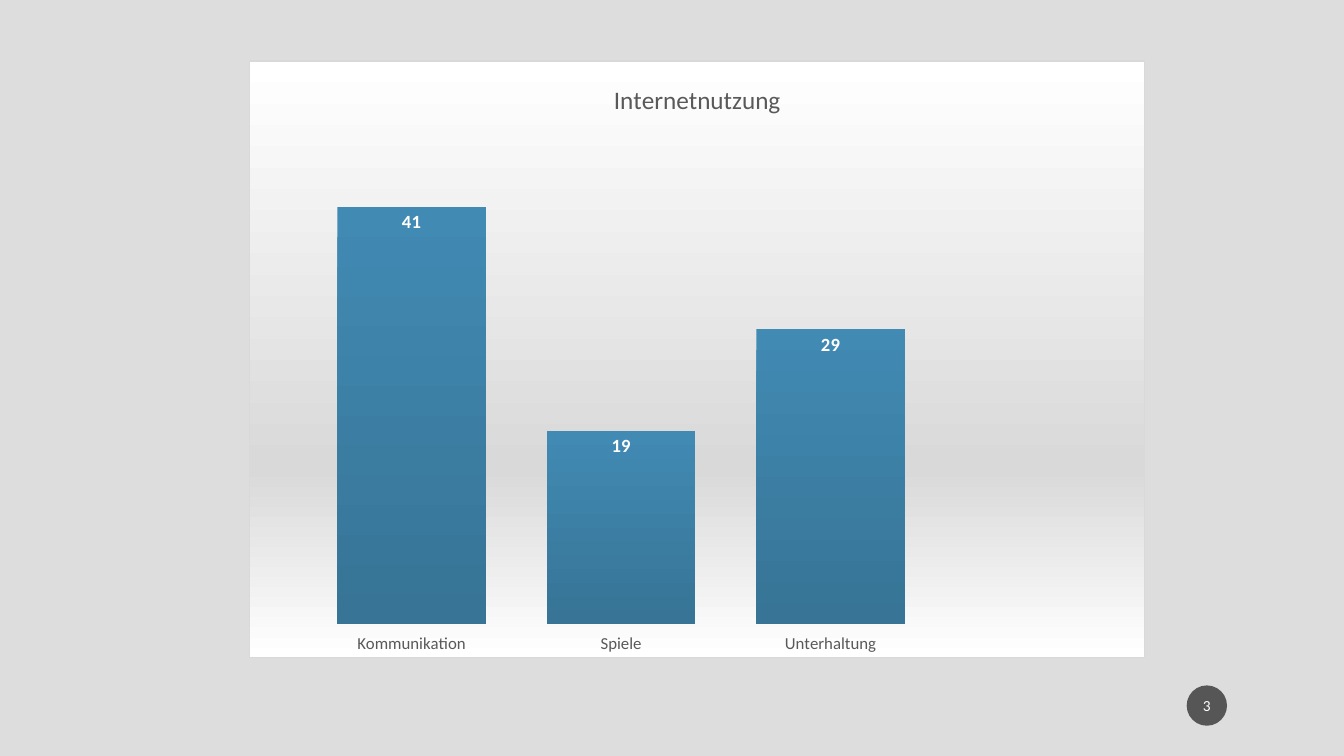
"""Build a slide with a column chart on internet use and a page badge."""
from lxml.etree import SubElement
from pptx import Presentation
from pptx.chart.data import CategoryChartData
from pptx.dml.color import RGBColor
from pptx.enum.chart import XL_CHART_TYPE as ChartType
from pptx.enum.chart import XL_LABEL_POSITION as LabelPosition
from pptx.enum.chart import XL_TICK_LABEL_POSITION as TickLabels
from pptx.enum.chart import XL_TICK_MARK as TickMark
from pptx.enum.shapes import MSO_SHAPE as Shape
from pptx.enum.text import MSO_ANCHOR as Anchor
from pptx.enum.text import PP_ALIGN as Align
from pptx.oxml import parse_xml
from pptx.oxml.ns import nsdecls, qn
from pptx.util import Inches, Pt

TITLE = "Internetnutzung"
USAGE = [("Kommunikation", 41), ("Spiele", 19), ("Unterhaltung", 29), ("", None)]
PAGE = "3"
FONT = "Calibri"
BACKDROP, GREY, WHITE, BADGE = "DDDDDD", "595959", "FFFFFF", "1D1D1D"
PANEL_STOPS = [(0, "FFFFFF"), (68, "D9D9D9"), (100, "FFFFFF")]
BAR_STOPS = [(0, "418AB3"), (100, "377496")]
PANEL_BORDER = "D9D9D9"
PLOT = {"x": 0.064, "y": 0.177, "w": 0.936, "h": 0.767}
CHART_BOX = (2.47, 0.6, 8.89, 5.93)
BADGE_BOX = (11.77, 6.8, 0.4, 0.4)


def color(hex_code):
    return RGBColor.from_string(hex_code)


def style(font, size, hex_code, bold=False):
    font.name, font.size, font.bold = FONT, Pt(size), bold
    font.color.rgb = color(hex_code)


def vertical_gradient(stops):
    marks = "".join(
        f'<a:gs pos="{share * 1000}"><a:srgbClr val="{code}"/></a:gs>'
        for share, code in stops
    )
    return parse_xml(
        f'<a:gradFill {nsdecls("a")} rotWithShape="1"><a:gsLst>{marks}</a:gsLst>'
        '<a:lin ang="5400000" scaled="0"/></a:gradFill>'
    )


def style_panel(chart):
    panel = parse_xml(
        f'<c:spPr {nsdecls("c", "a")}><a:ln w="{Pt(0.75)}"><a:solidFill>'
        f'<a:srgbClr val="{PANEL_BORDER}"/></a:solidFill></a:ln></c:spPr>'
    )
    panel.insert(0, vertical_gradient(PANEL_STOPS))
    space = chart._chartSpace
    space.find(qn("c:chart")).addnext(panel)

    plot_area = space.find(".//" + qn("c:plotArea"))
    for layout in plot_area.findall(qn("c:layout")):
        plot_area.remove(layout)
    settings = {"layoutTarget": "inner", "xMode": "edge", "yMode": "edge", **PLOT}
    values = "".join(f'<c:{key} val="{value}"/>' for key, value in settings.items())
    plot_area.insert(0, parse_xml(
        f'<c:layout {nsdecls("c")}><c:manualLayout>{values}</c:manualLayout></c:layout>'
    ))


def add_usage_chart(slide):
    usage = CategoryChartData()
    usage.categories = [name for name, _ in USAGE]
    usage.add_series(TITLE, [share for _, share in USAGE])
    chart = slide.shapes.add_chart(
        ChartType.COLUMN_CLUSTERED, *map(Inches, CHART_BOX), usage
    ).chart
    style(chart.font, 10, "000000")
    chart.has_legend = False
    chart.has_title = True
    heading = chart.chart_title.text_frame
    heading.text = TITLE
    style(heading.paragraphs[0].runs[0].font, 18, GREY)

    names = chart.category_axis
    names.major_tick_mark = names.minor_tick_mark = TickMark.NONE
    names.tick_label_position = TickLabels.LOW
    names.format.line.fill.background()
    style(names.tick_labels.font, 12, GREY)
    scale = chart.value_axis
    scale.minimum_scale, scale.maximum_scale = 0, 45
    scale.has_major_gridlines = False
    scale.visible = False

    bars = chart.plots[0]
    bars.gap_width = 41
    bars.vary_by_categories = False
    series = bars.series[0]
    series.invert_if_negative = False
    series._element.get_or_add_spPr().insert(0, vertical_gradient(BAR_STOPS))
    labels = series.data_labels
    labels.show_value = True
    labels.position = LabelPosition.INSIDE_END
    style(labels.font, 13.3, WHITE, bold=True)
    style_panel(chart)


def add_page_badge(slide):
    badge = slide.shapes.add_shape(Shape.OVAL, *map(Inches, BADGE_BOX))
    badge.shadow.inherit = False
    badge.fill.solid()
    badge.fill.fore_color.rgb = color(BADGE)
    tint = badge._element.spPr.find(".//" + qn("a:srgbClr"))
    SubElement(tint, qn("a:alpha")).set("val", "70000")
    badge.line.fill.background()
    frame = badge.text_frame
    frame.margin_left = frame.margin_right = Inches(0.02)
    frame.margin_top = frame.margin_bottom = Inches(0.05)
    frame.vertical_anchor = Anchor.MIDDLE
    frame.text = PAGE
    frame.paragraphs[0].alignment = Align.CENTER
    style(frame.paragraphs[0].runs[0].font, 11, WHITE)


def main():
    deck = Presentation()
    deck.slide_width, deck.slide_height = Inches(13.33), Inches(7.5)
    slide = deck.slides.add_slide(deck.slide_layouts[6])
    slide.background.fill.solid()
    slide.background.fill.fore_color.rgb = color(BACKDROP)
    add_page_badge(slide)
    add_usage_chart(slide)
    deck.save("out.pptx")


if __name__ == "__main__":
    main()
